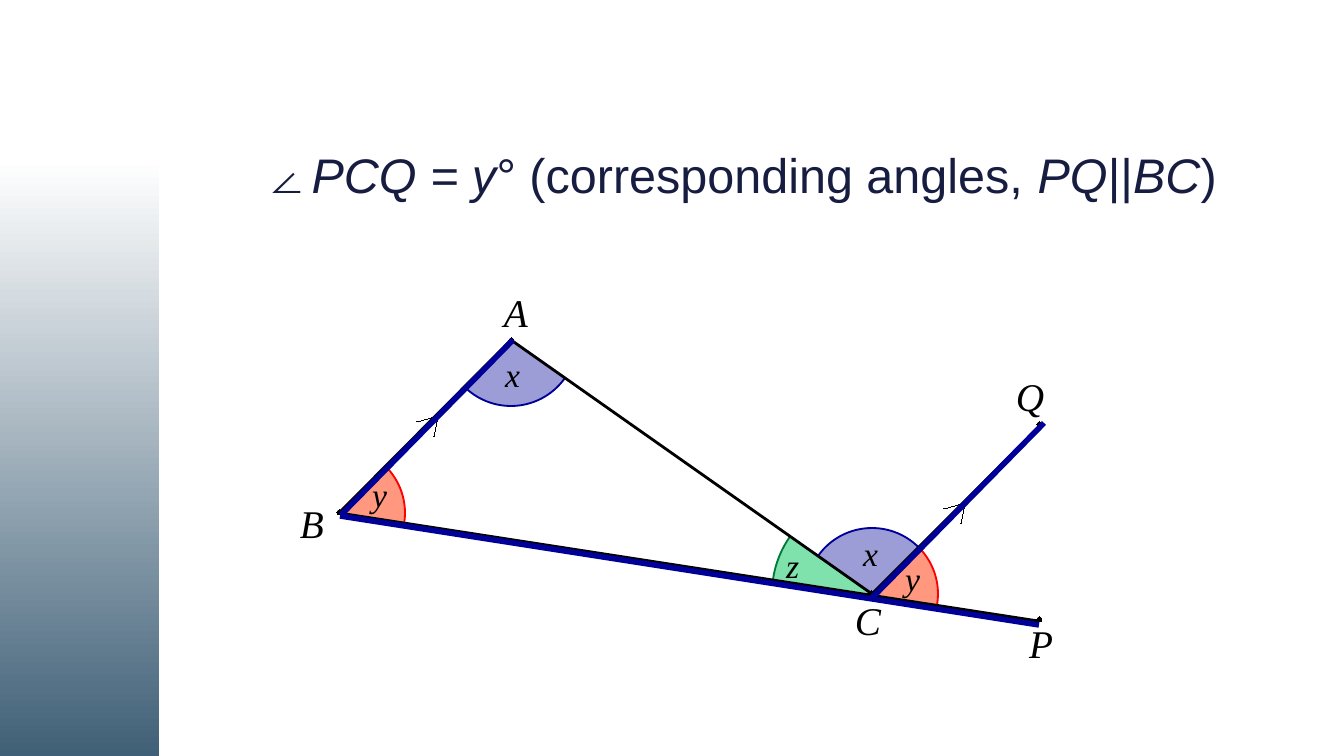
"""Builds a geometry slide on corresponding angles made by parallel lines."""
from copy import deepcopy
from math import atan2, ceil, cos, pi, sin, tan

from pptx import Presentation
from pptx.dml.color import RGBColor
from pptx.enum.shapes import MSO_CONNECTOR as Conn, MSO_SHAPE as Kind
from pptx.enum.text import MSO_ANCHOR as Anchor, MSO_AUTO_SIZE as Fit, PP_ALIGN as Align
from pptx.oxml.ns import qn
from pptx.util import Pt

TITLE = [("∠PCQ = y", True), ("° (corresponding angles, ", False),
         ("PQ", True), ("||", False), ("BC", True), (")", False)]
A, B, C, P, Q = (511, 340), (339, 513), (872, 594), (1038, 621), (1043, 423)
ANGLES = [(B, A, P, 66, "FF3300", 50, "FF0000"),
          (A, C, B, 66, "000099", 39, "000099"),
          (C, B, A, 100, "00C459", 50, "007A37"),
          (C, Q, P, 66, "FF3300", 50, "FF0000"),
          (C, A, Q, 66, "000099", 39, "000099")]
SIDES = [(A, B), (A, C), (B, P), (Q, C)]
BOLD = [((513, 340), (341, 515)), ((340, 516), (1039, 625)), ((1044, 423), (872, 598))]
TIPS = [(438, 416), (965, 503)]
BARBS = [(-4, 21), (-21, 6)]
DOTS = [(512, 341), (340, 513), (872, 594), (1040, 425), (1040, 620)]
NAMES = [("A", 504, 288, 24, 47), ("B", 300, 499, 24, 47), ("C", 855, 596, 27, 47),
         ("Q", 1016, 372, 44, 69), ("P", 1029, 619, 52, 47)]
MARKS = [("x", 492, 347), ("y", 359, 467), ("z", 773, 538), ("y", 892, 551), ("x", 850, 526)]

UNIT = 914400 / 134.4


def px(*vals):
    return [round(val * UNIT) for val in vals]


def hue(code):
    return RGBColor.from_string(code)


def stroke(shape, color, width):
    shape.line.color.rgb = hue(color)
    shape._element.spPr.find(qn("a:ln")).set("w", str(int(Pt(width))))


def paint(shape, fill, line=None, width=0):
    shape.shadow.inherit = False
    shape.fill.solid()
    shape.fill.fore_color.rgb = hue(fill)
    if line:
        stroke(shape, line, width)
    else:
        shape.line.fill.background()


def rule(home, start, end, color, width):
    line = home.add_connector(Conn.STRAIGHT, *px(*start, *end))
    stroke(line, color, width)
    line._element.spPr.append(line._element.makeelement(qn("a:effectLst"), {}))


def curve(hub, size, low, high):
    pull = 4 / 3 * tan((high - low) / 4)
    spots = [(low, pull), (high, -pull), (high, 0)]
    return [px(hub[0] + size * (cos(t) - k * sin(t)),
               hub[1] + size * (sin(t) + k * cos(t))) for t, k in spots]


def sector(hub, one, two, size, fill, alpha, edge):
    low, high = [atan2(y - hub[1], x - hub[0]) for x, y in (one, two)]
    high = low + (high - low) % (2 * pi)
    if high - low > pi:
        low, high = high, low + 2 * pi
    axis = ceil(low / (pi / 2)) * pi / 2
    cuts = [low, axis, high] if axis < high else [low, high]
    arc = [spot for pair in zip(cuts, cuts[1:]) for spot in curve(hub, size, *pair)]
    pen = shapes.build_freeform(*px(hub[0] + size * cos(low), hub[1] + size * sin(low)))
    pen.add_line_segments(arc + [px(*hub)], close=True)
    shape = pen.convert_to_shape()
    paint(shape, fill, edge, 1)
    tint = shape._element.spPr.find(qn("a:solidFill"))[0]
    tint.append(tint.makeelement(qn("a:alpha"), {"val": str(alpha * 1000)}))
    body = next(shape._element.iter(qn("a:path")))
    legs = list(body)[1:-2]
    for i in range(0, len(legs), 3):
        bend = body.makeelement(qn("a:cubicBezTo"), {})
        legs[i].addprevious(bend)
        for leg in legs[i:i + 3]:
            bend.append(leg[0])
            body.remove(leg)
    rim = deepcopy(body)
    for part in rim[-2:]:
        rim.remove(part)
    rim.set("fill", "none")
    body.set("stroke", "0")
    body.addprevious(rim)


def write(para, text, size, font, color, slant):
    run = para.add_run()
    run.text = text
    run.font.size, run.font.name, run.font.italic = Pt(size), font, slant
    run.font.color.rgb = hue(color)


def inset(frame, side, top):
    frame.margin_left = frame.margin_right = side
    frame.margin_top = frame.margin_bottom = top


def label(text, left, top, wide, high, size):
    frame = shapes.add_textbox(*px(left, top, wide, high)).text_frame
    frame.word_wrap = True
    write(frame.paragraphs[0], text, size, "Times New Roman", "000000", True)
    return frame


deck = Presentation()
deck.slide_width, deck.slide_height = px(1344, 756)
slide = deck.slides.add_slide(deck.slide_layouts[5])
shapes = slide.shapes

band = shapes.add_shape(Kind.RECTANGLE, *px(0, 0, 159, 756))
paint(band, "FFFFFF")
band.fill.gradient()
band.fill.gradient_angle = 90
for stop, (spot, code) in zip(band.fill.gradient_stops, [(0, "406077"), (0.79, "FFFFFF")]):
    stop.position = spot
    stop.color.rgb = hue(code)

title = shapes.title
title.left, title.top, title.width, title.height = px(253, 147, 1091, 133)
frame = title.text_frame
frame.word_wrap, frame.auto_size, frame.vertical_anchor = True, Fit.NONE, Anchor.TOP
inset(frame, *px(10, 5))
para = frame.paragraphs[0]
para.alignment, para.line_spacing = Align.LEFT, 0.9
for text, slant in TITLE:
    write(para, text, 26, "Arial", "171C41", slant)

for angle in ANGLES:
    sector(*angle)
for start, end in SIDES:
    rule(shapes, start, end, "000000", 1.5)
for x, y in TIPS:
    barb = shapes.add_group_shape().shapes
    for dx, dy in BARBS:
        rule(barb, (x + dx, y + dy), (x, y), "000000", 0)
for x, y in DOTS:
    paint(shapes.add_shape(Kind.OVAL, *px(x - 3, y - 3, 5, 5)), "000000", "000000")
for name in NAMES:
    frame = label(*name, 21)
    inset(frame, 0, 0)
    frame.paragraphs[0].space_after = Pt(7.5)
for text, left, top in MARKS:
    label(text, left, top, 71, 54, 18).auto_size = Fit.SHAPE_TO_FIT_TEXT
thick = shapes.add_group_shape().shapes
for start, end in BOLD:
    rule(thick, start, end, "000099", 3)

deck.save("out.pptx")
